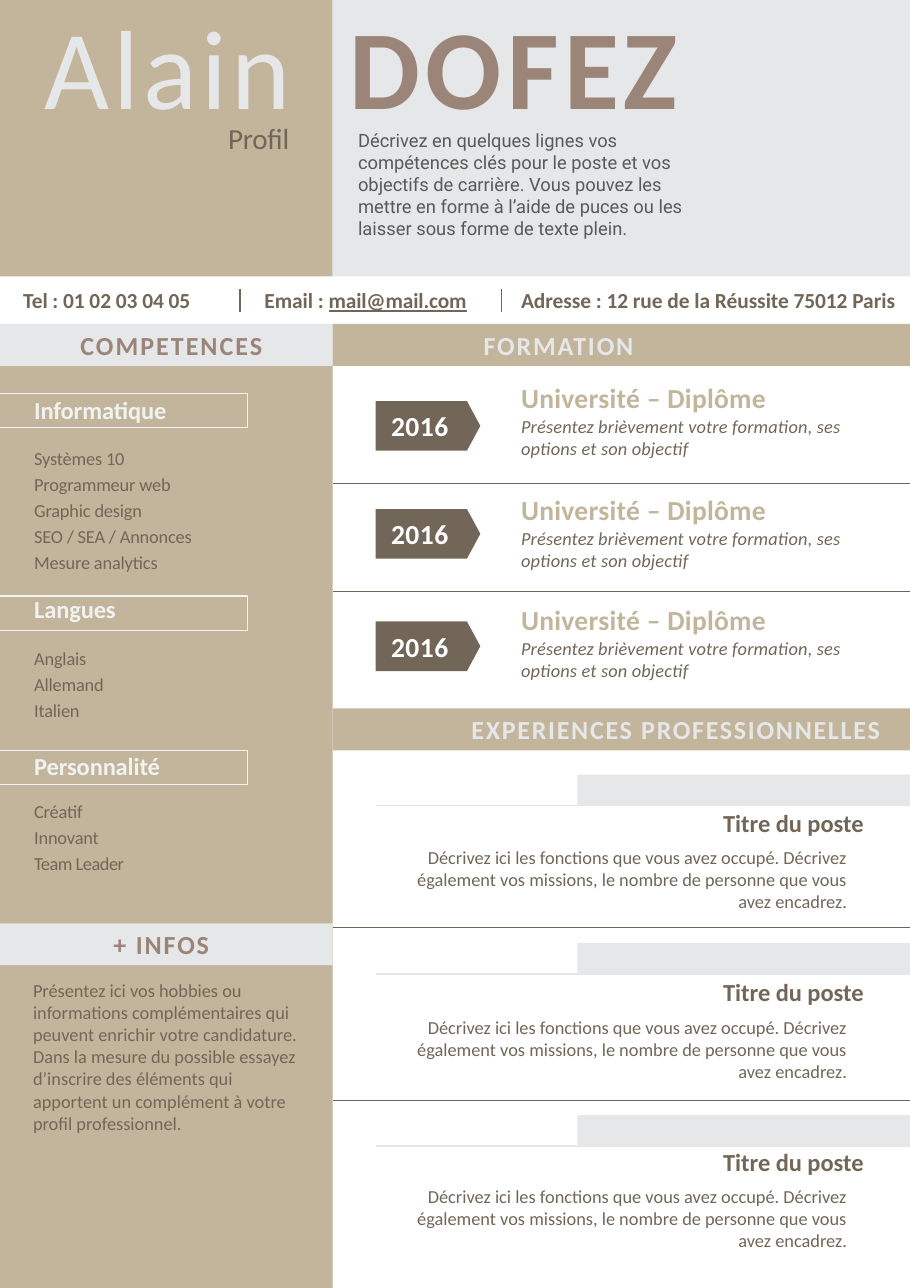
import pptx
import pptx.dml.color
import pptx.enum.shapes
import pptx.enum.text
import pptx.oxml.ns
import pptx.util
from lxml import etree

Inches = pptx.util.Inches
Pt = pptx.util.Pt
RGBColor = pptx.dml.color.RGBColor
MSO_SHAPE = pptx.enum.shapes.MSO_SHAPE
MSO_ANCHOR = pptx.enum.text.MSO_ANCHOR
PP_ALIGN = pptx.enum.text.PP_ALIGN

SAND = RGBColor(0xC2, 0xB5, 0x9B)
MIST = RGBColor(0xE6, 0xE7, 0xE8)
PEARL = RGBColor(0xF1, 0xF2, 0xF2)
BROWN = RGBColor(0x72, 0x66, 0x58)
ROSE = RGBColor(0x9B, 0x85, 0x79)
GREY = RGBColor(0x59, 0x59, 0x59)
WHITE = RGBColor(0xFF, 0xFF, 0xFF)

PAGE_W, PAGE_H = 8.26, 11.69
SIDE_W = 3.02
MAIN_W = PAGE_W - SIDE_W
BAND_H = 0.38


def write(frame, text, size=12, color=BROWN, bold=False, italic=False,
          underline=False, font="Calibri", spacing=0, align=PP_ALIGN.LEFT,
          line=None, before=0, margins=0, join=False):
    """Add a paragraph to the frame, or a span to its last paragraph."""
    para = frame.paragraphs[-1]
    if para.runs and not join:
        para = frame.add_paragraph()
    if not join:
        para.alignment = align
        if line:
            para.line_spacing = line
        if before:
            para.space_before = Pt(before)
        if margins:
            for side in ("marL", "marR"):
                para._p.get_or_add_pPr().set(side, str(Inches(margins)))
    span = para.add_run()
    span.text = text
    span.font.name = font
    span.font.size = Pt(size)
    span.font.bold = bold
    span.font.italic = italic
    span.font.underline = underline
    span.font.color.rgb = color
    if spacing:
        span._r.get_or_add_rPr().set("spc", str(round(spacing * 100)))


def clear_margins(frame):
    frame.margin_left = frame.margin_right = 0
    frame.margin_top = frame.margin_bottom = 0
    frame.word_wrap = True


def text_box(page, left, top, width, height):
    box = page.shapes.add_textbox(
        Inches(left), Inches(top), Inches(width), Inches(height))
    clear_margins(box.text_frame)
    return box.text_frame


def block(page, left, top, width, height, color, kind=MSO_SHAPE.RECTANGLE):
    shape = page.shapes.add_shape(
        kind, Inches(left), Inches(top), Inches(width), Inches(height))
    shape.shadow.inherit = False
    shape.fill.solid()
    shape.fill.fore_color.rgb = color
    shape.line.fill.background()
    clear_margins(shape.text_frame)
    shape.text_frame.vertical_anchor = MSO_ANCHOR.MIDDLE
    return shape


def rule(page, left, top, width=0, height=0, color=BROWN, weight=0.5):
    line = page.shapes.add_connector(
        pptx.enum.shapes.MSO_CONNECTOR.STRAIGHT, Inches(left), Inches(top),
        Inches(left + width), Inches(top + height))
    line.line.color.rgb = color
    line.line.width = Pt(weight)
    etree.SubElement(line._element.spPr, pptx.oxml.ns.qn("a:effectLst"))


def band(page, left, top, width, label, indent, fill, color, spacing):
    frame = block(page, left, top, width, BAND_H, fill).text_frame
    frame.margin_left = Inches(indent)
    write(frame, label, size=17, color=color, bold=True, spacing=spacing)


def header(page, left, top, height):
    block(page, left, top, SIDE_W, height, SAND)
    block(page, left + SIDE_W, top, MAIN_W, height, MIST)
    write(text_box(page, left + 0.4, top - 0.03, 2.6, 1.24), "Alain",
          size=73.5, color=MIST, spacing=2.8)
    write(text_box(page, left + 3.17, top - 0.03, 3.4, 1.24), "DOFEZ",
          size=73.5, color=ROSE, bold=True, spacing=3.6)
    write(text_box(page, left + 2.07, top + 1.09, 0.75, 0.32), "Profil",
          size=19, spacing=-0.1)
    write(text_box(page, left + 3.25, top + 1.17, 2.98, 1.01),
          "Décrivez en quelques lignes vos compétences clés pour le poste et "
          "vos objectifs de carrière. Vous pouvez les mettre en forme à l’aide "
          "de puces ou les laisser sous forme de texte plein.",
          color=GREY, font="Roboto")


def contact_row(page, top):
    contacts = [(0.21, 1.65, "Tel : 01 02 03 04 05", ""),
                (2.4, 1.95, "Email : ", "mail@mail.com"),
                (4.73, 3.53, "Adresse : 12 rue de la Réussite 75012 Paris", "")]
    for left, width, text, underlined in contacts:
        frame = text_box(page, left, top, width, 0.24)
        write(frame, text, size=14, bold=True, spacing=-0.05)
        if underlined:
            write(frame, underlined, size=14, bold=True, underline=True,
                  spacing=-0.1, join=True)
    for left in (2.18, 4.55):
        rule(page, left, top + 0.01, height=0.21, weight=1)


def skill_group(page, top, title, title_top, items, items_top):
    # Frame open on the page edge
    builder = page.shapes.build_freeform(0, Inches(top + 0.31))
    builder.add_line_segments(
        [(Inches(2.25), Inches(top + 0.31)), (Inches(2.25), Inches(top)),
         (0, Inches(top))], close=False)
    outline = builder.convert_to_shape()
    outline.shadow.inherit = False
    outline.fill.background()
    outline.line.color.rgb = PEARL
    outline.line.width = Pt(0.75)

    write(text_box(page, 0.31, title_top, 1.65, 0.27), title,
          size=16, color=PEARL, bold=True, spacing=-0.05)
    frame = text_box(page, 0.31, items_top, 2.48, 0.24 * len(items))
    for item in items:
        write(frame, item, spacing=-0.3 if item == "Team Leader" else -0.1,
              line=1.18)


def sidebar(page, top):
    infos_top = top + 5.44
    block(page, 0, top + BAND_H, SIDE_W, PAGE_H - top - BAND_H, SAND)
    band(page, 0, top, SIDE_W, "COMPETENCES", 0.73, MIST, ROSE, 1.3)
    skill_group(page, top + 0.63, "Informatique", top + 0.65,
                ["Systèmes 10", "Programmeur web", "Graphic design",
                 "SEO / SEA / Annonces", "Mesure analytics"], top + 1.08)
    skill_group(page, top + 2.47, "Langues", top + 2.45,
                ["Anglais", "Allemand", "Italien"], top + 2.9)
    skill_group(page, top + 3.87, "Personnalité", top + 3.88,
                ["Créatif", "Innovant", "Team Leader"], top + 4.29)
    band(page, 0, infos_top, SIDE_W, "+ INFOS", 1.03, MIST, ROSE, 1.2)
    write(text_box(page, 0.3, infos_top + 0.51, 2.46, 1.41),
          "Présentez ici vos hobbies ou informations complémentaires qui "
          "peuvent enrichir votre candidature. Dans la mesure du possible "
          "essayez d’inscrire des éléments qui apportent un complément à "
          "votre profil professionnel.")


def education(page, left, top):
    band(page, left, top, MAIN_W, "FORMATION", 1.37, SAND, MIST, 1.2)
    for tag_top, text_top in ((0.7, 0.52), (1.68, 1.53), (2.7, 2.53)):
        tag = block(page, left + 0.39, top + tag_top, 0.95, 0.45, BROWN,
                    MSO_SHAPE.PENTAGON)
        tag.adjustments[0] = 0.27
        tag.text_frame.margin_left = Inches(0.14)
        write(tag.text_frame, "2016", size=18, color=WHITE, bold=True,
              spacing=0.3)
        frame = text_box(page, left + 1.71, top + text_top, 3.11, 0.72)
        write(frame, "Université – Diplôme", size=18, color=SAND, bold=True,
              spacing=0.2)
        write(frame, "Présentez brièvement votre formation, ses options et "
              "son objectif", italic=True, spacing=0.1, before=0.8)
    for rule_top in (1.45, 2.43):
        rule(page, left, top + rule_top, MAIN_W)


def experience(page, left, top):
    band(page, left, top, MAIN_W, "EXPERIENCES PROFESSIONNELLES", 1.26,
         SAND, MIST, 1.1)
    for bar_top, text_top in ((0.6, 0.9), (2.13, 2.44), (3.69, 3.98)):
        block(page, left + 2.22, top + bar_top, MAIN_W - 2.22, 0.28, MIST)
        rule(page, left + 0.39, top + bar_top + 0.28, MAIN_W - 0.39,
             color=MIST, weight=1)
        frame = text_box(page, left + 0.38, top + text_top, 4.44, 0.96)
        write(frame, "Titre du poste", size=16, bold=True,
              align=PP_ALIGN.RIGHT)
        write(frame, "Décrivez ici les fonctions que vous avez occupé. "
              "Décrivez également vos missions, le nombre de personne que "
              "vous avez encadrez.", align=PP_ALIGN.RIGHT, before=6,
              margins=0.15)
    for rule_top in (1.99, 3.56):
        rule(page, left, top + rule_top, MAIN_W)


def main():
    deck = pptx.Presentation()
    deck.slide_width, deck.slide_height = Inches(PAGE_W), Inches(PAGE_H)
    page = deck.slides.add_slide(deck.slide_layouts[6])
    header(page, 0, 0, 2.51)
    contact_row(page, 2.61)
    sidebar(page, 2.94)
    education(page, SIDE_W, 2.94)
    experience(page, SIDE_W, 6.43)
    deck.save("out.pptx")


if __name__ == "__main__":
    main()
